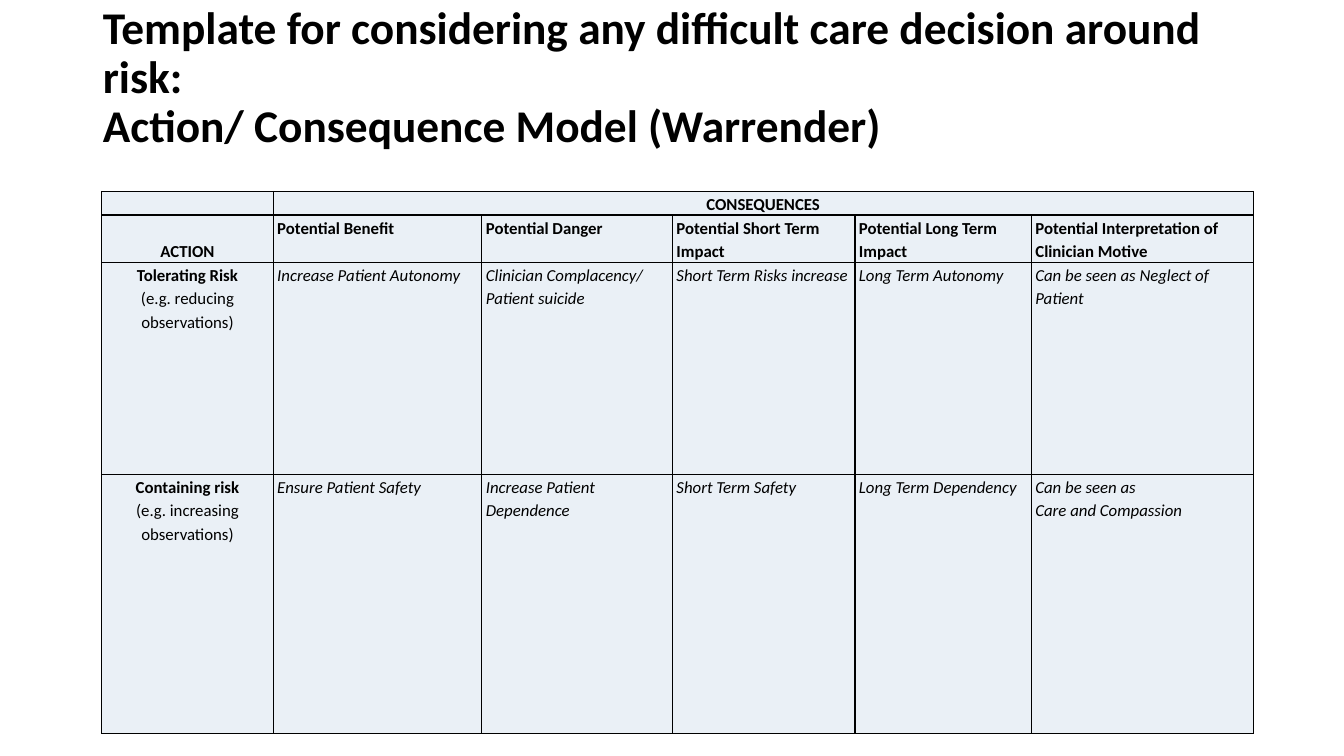
from dataclasses import dataclass

import pptx
import pptx.dml.color
import pptx.enum.text
import pptx.oxml
import pptx.oxml.ns
import pptx.util

Inches = pptx.util.Inches
Pt = pptx.util.Pt
Color = pptx.dml.color.RGBColor
Align = pptx.enum.text.PP_ALIGN
Anchor = pptx.enum.text.MSO_ANCHOR


@dataclass(frozen=True)
class Theme:
    font: str = "Calibri"
    ink: str = "000000"
    cell_fill: str = "EAF0F6"
    title_size: float = 32.4
    table_size: float = 12
    border_width: float = 1


theme = Theme()


def style(paragraph, size, bold=False, italic=False):
    font = paragraph.font
    font.name, font.size = theme.font, Pt(size)
    font.bold, font.italic = bold, italic
    font.color.rgb = Color.from_string(theme.ink)


def add_borders(cell):
    properties = cell._tc.get_or_add_tcPr()
    for position, side in enumerate(("lnL", "lnR", "lnT", "lnB")):
        border = pptx.oxml.parse_xml(
            f'<a:{side} {pptx.oxml.ns.nsdecls("a")} w="{Pt(theme.border_width)}">'
            f'<a:solidFill><a:srgbClr val="{theme.ink}"/></a:solidFill></a:{side}>'
        )
        properties.insert(position, border)


presentation = pptx.Presentation()
presentation.slide_width = Inches(13.33)
presentation.slide_height = Inches(7.5)
slide = presentation.slides.add_slide(presentation.slide_layouts[5])

title = slide.shapes.title
title.left, title.top = Inches(0.92), Inches(0.4)
title.width, title.height = Inches(11.5), Inches(1.45)
title_frame = title.text_frame
title_frame.text = (
    "Template for considering any difficult care decision around risk:\v"
    "Action/ Consequence Model (Warrender)"
)
title_frame.word_wrap = True
title_frame.auto_size = pptx.enum.text.MSO_AUTO_SIZE.NONE
title_frame.vertical_anchor = Anchor.MIDDLE
title_frame.margin_bottom = Inches(0.73)
title_paragraph = title_frame.paragraphs[0]
title_paragraph.alignment = Align.LEFT
title_paragraph.line_spacing = 0.9
style(title_paragraph, theme.title_size, bold=True)

column_widths = [1.7, 2.07, 1.89, 1.81, 1.75, 2.2]
row_heights = [0.23, 0.47, 2.1, 2.57]
rows = [
    ["", "CONSEQUENCES", "", "", "", ""],
    ["ACTION", "Potential Benefit", "Potential Danger", "Potential Short Term Impact",
     "Potential Long Term Impact", "Potential Interpretation of Clinician Motive"],
    ["Tolerating Risk\n(e.g. reducing observations)", "Increase Patient Autonomy",
     "Clinician Complacency/ Patient suicide", "Short Term Risks increase",
     "Long Term Autonomy", "Can be seen as Neglect of Patient"],
    ["Containing risk\n(e.g. increasing observations)", "Ensure Patient Safety",
     "Increase Patient Dependence", "Short Term Safety",
     "Long Term Dependency", "Can be seen as\nCare and Compassion"],
]

table = slide.shapes.add_table(
    len(rows), len(column_widths), Inches(1.01), Inches(1.9),
    Inches(sum(column_widths)), Inches(sum(row_heights)),
).table
for column, width in zip(table.columns, column_widths):
    column.width = Inches(width)
for row, height in zip(table.rows, row_heights):
    row.height = Inches(height)
table.cell(0, 1).merge(table.cell(0, len(column_widths) - 1))

for row_index, texts in enumerate(rows):
    is_header = row_index < 2
    for column_index, text in enumerate(texts):
        is_action = column_index == 0
        cell = table.cell(row_index, column_index)
        cell.text = text
        cell.margin_left = cell.margin_right = Inches(0.04)
        cell.margin_top = cell.margin_bottom = 0
        cell.vertical_anchor = Anchor.BOTTOM if is_header and is_action else Anchor.TOP
        cell.fill.solid()
        cell.fill.fore_color.rgb = Color.from_string(theme.cell_fill)
        add_borders(cell)
        for line_index, paragraph in enumerate(cell.text_frame.paragraphs):
            paragraph.alignment = Align.CENTER if is_action or row_index == 0 else Align.LEFT
            paragraph.line_spacing = 1.15
            style(
                paragraph, theme.table_size,
                bold=is_header or (is_action and line_index == 0),
                italic=not is_header and not is_action,
            )

presentation.save("out.pptx")
